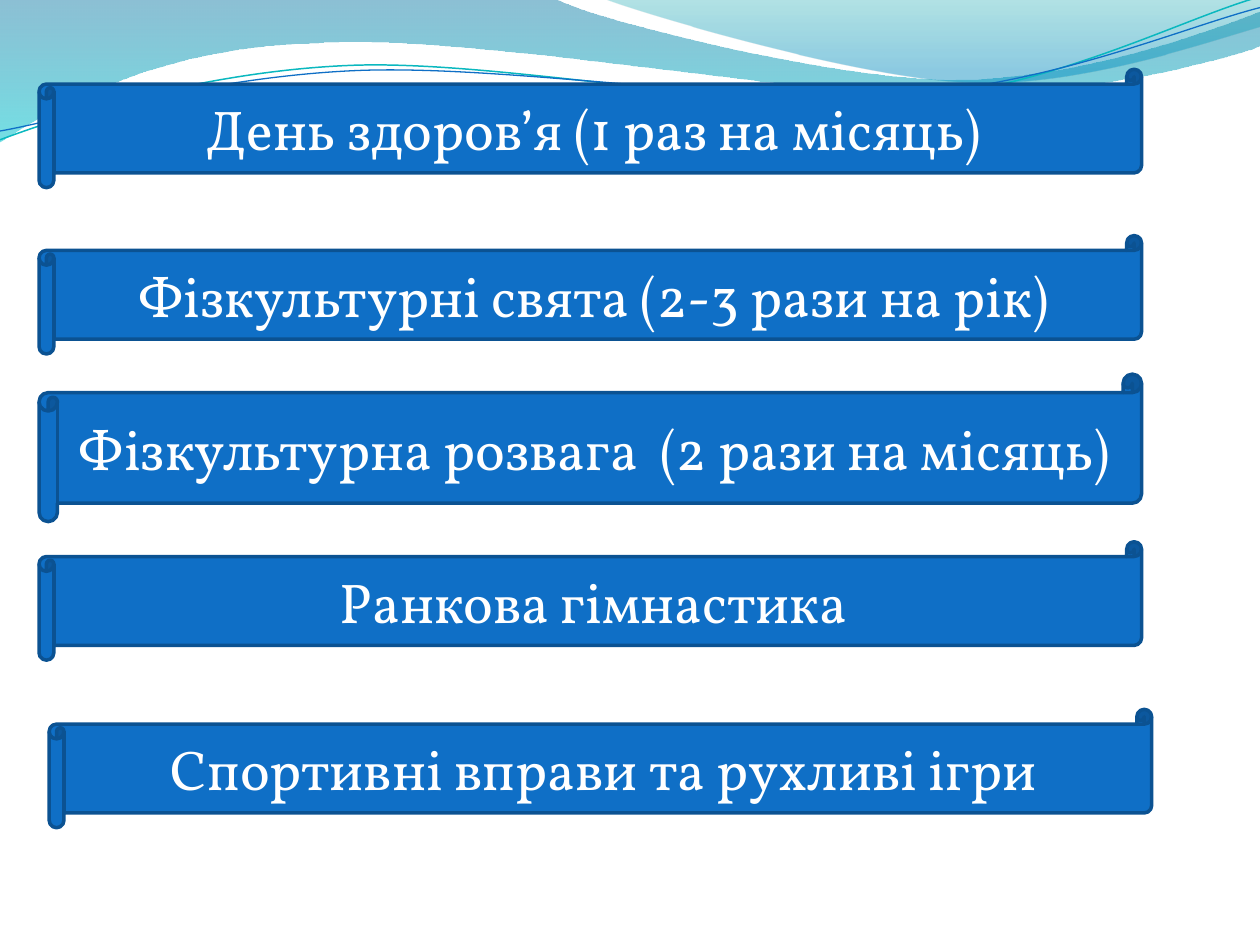
from math import cos, radians, sin
from typing import NamedTuple

from lxml.etree import SubElement
from pptx import Presentation
from pptx.dml.color import RGBColor
from pptx.enum.shapes import MSO_SHAPE
from pptx.enum.text import MSO_ANCHOR, PP_ALIGN
from pptx.oxml.ns import qn
from pptx.util import Inches, Pt

FONT = "Vollkorn"
BLUE, DARK_BLUE, WHITE = "0F6FC6", "0B5292", "FFFFFF"


class Stop(NamedTuple):
    position: float
    color: str
    opacity: int


class Wave(NamedTuple):
    """Segments after the start hold 2 numbers for a line, 6 for a Bezier curve."""
    frame: tuple
    start: tuple
    segments: list
    stops: tuple = ()
    line: str = ""
    width: float = 0
    rotation: float = 0


class Scroll(NamedTuple):
    text: str
    top: float
    left: float = 0.31
    height: float = 0.94


WAVES = [
    Wave((-0.01, -0.01, 10.02, 1.14), (0, 0), [
        (4.4, -0.01),
        (4.76, 0.17, 6.64, 0.63, 7.58, 0.63),
        (8.53, 0.63, 9.58, 0.26, 10, 0.09),
        (10.01, 0.36),
        (9.83, 0.44, 8.7, 0.76, 7.46, 0.75),
        (6.22, 0.75, 3.82, 0.28, 2.57, 0.34),
        (1.29, 0.36, 0.46, 0.83, -0.01, 1.13),
        (0, 0),
    ], stops=(Stop(0, "0074A1", 45), Stop(1, "00C6CF", 55))),
    Wave((4.79, -0.01, 5.21, 0.7), (4.79, -0.01), [
        (5.09, 0.11, 6.82, 0.62, 7.69, 0.65),
        (8.56, 0.69, 9.61, 0.32, 10, 0.21),
        (10, 0),
        (4.79, -0.01),
    ], stops=(Stop(0, "00A1A9", 30), Stop(0.8, "008BBF", 45))),
    Wave((-0.02, 0.22, 10.02, 0.71), (0, 1.11), [
        (0.48, 0.93, 1.58, 0.57, 2.77, 0.52),
        (3.95, 0.47, 5.93, 0.89, 7.13, 0.8),
        (8.33, 0.71, 9.38, 0.15, 9.98, -0.02),
    ], line="0AB8BF", width=0.85, rotation=357.3),
    Wave((-0.02, 0.3, 10.03, 0.58), (0, 1.04), [
        (0.47, 0.96, 1.64, 0.61, 2.83, 0.56),
        (4.03, 0.51, 5.97, 0.84, 7.17, 0.75),
        (8.36, 0.67, 9.41, 0.21, 10, 0.06),
    ], line=BLUE, width=0.75, rotation=357.3),
]

SCROLLS = [
    Scroll("День здоров’я (1 раз на місяць)", 0.55),
    Scroll("Фізкультурні свята (2-3 рази на рік)", 1.87),
    Scroll("Фізкультурна розвага  (2 рази на місяць)", 2.97, height=1.17),
    Scroll("Ранкова гімнастика", 4.3),
    Scroll("Спортивні вправи та рухливі ігри", 5.63, left=0.39),
]


def rgb(color: str) -> RGBColor:
    return RGBColor.from_string(color)


def fill_gradient(shape, stops: tuple) -> None:
    """Fill from top to bottom with partly transparent colours."""
    shape.fill.gradient()
    shape.fill.gradient_angle = 270
    for gradient_stop, stop in zip(shape.fill.gradient_stops, stops):
        gradient_stop.position = stop.position
        gradient_stop.color.rgb = rgb(stop.color)
    for element, stop in zip(shape._element.iter(qn("a:srgbClr")), stops):
        SubElement(element, qn("a:alpha"), val=str(stop.opacity * 1000))


def set_line(shape, color: str, width: float) -> None:
    shape.line.color.rgb = rgb(color)
    shape.line.width = Pt(width)


def local_point(wave: Wave, x: float, y: float) -> tuple:
    """Place of a slide point within the wave's frame before it is rotated."""
    left, top, width, height = wave.frame
    across, down = x - left - width / 2, y - top - height / 2
    angle = radians(-wave.rotation)
    return (Inches(across * cos(angle) - down * sin(angle) + width / 2),
            Inches(across * sin(angle) + down * cos(angle) + height / 2))


def draw_outline(shape, wave: Wave) -> None:
    """Fit the shape to the wave's frame and give it real Bezier curves."""
    left, top, width, height = map(Inches, wave.frame)
    shape.left, shape.top, shape.width, shape.height = left, top, width, height
    shape.rotation = wave.rotation
    outline = next(shape._element.iter(qn("a:path")))
    for child in list(outline):
        outline.remove(child)
    outline.set("w", str(width))
    outline.set("h", str(height))
    commands = {2: "a:lnTo", 6: "a:cubicBezTo"}
    steps = [("a:moveTo", wave.start)]
    steps += [(commands[len(segment)], segment) for segment in wave.segments]
    for command, numbers in steps:
        step = SubElement(outline, qn(command))
        for x, y in zip(numbers[::2], numbers[1::2]):
            across, down = local_point(wave, x, y)
            SubElement(step, qn("a:pt"), x=str(across), y=str(down))
    if wave.stops:
        SubElement(outline, qn("a:close"))


def add_wave(page, wave: Wave) -> None:
    builder = page.shapes.build_freeform(*map(Inches, wave.start))
    builder.add_line_segments(
        [tuple(map(Inches, segment[-2:])) for segment in wave.segments], close=False)
    shape = builder.convert_to_shape()
    draw_outline(shape, wave)
    shape.shadow.inherit = False
    if wave.stops:
        fill_gradient(shape, wave.stops)
        shape.line.fill.background()
    else:
        shape.fill.background()
        set_line(shape, wave.line, wave.width)


def write_text(shape, text: str, *, size: float, color: str, font: str = FONT) -> None:
    frame = shape.text_frame
    frame.word_wrap = True
    frame.vertical_anchor = MSO_ANCHOR.MIDDLE
    para = frame.paragraphs[0]
    para.alignment = PP_ALIGN.CENTER
    span = para.add_run()
    span.text = text
    span.font.name = font
    span.font.size = Pt(size)
    span.font.color.rgb = rgb(color)


def add_scroll(page, scroll: Scroll) -> None:
    box = page.shapes.add_shape(
        MSO_SHAPE.HORIZONTAL_SCROLL, Inches(scroll.left), Inches(scroll.top),
        Inches(8.75), Inches(scroll.height))
    box.shadow.inherit = False
    box.fill.solid()
    box.fill.fore_color.rgb = rgb(BLUE)
    set_line(box, DARK_BLUE, 2)
    write_text(box, scroll.text, size=32, color=WHITE)


def main() -> None:
    deck = Presentation()
    deck.slide_width, deck.slide_height = Inches(10), Inches(7.5)
    page = deck.slides.add_slide(deck.slide_layouts[6])
    for wave in WAVES:
        add_wave(page, wave)
    for scroll in SCROLLS:
        add_scroll(page, scroll)
    deck.save("out.pptx")


if __name__ == "__main__":
    main()
